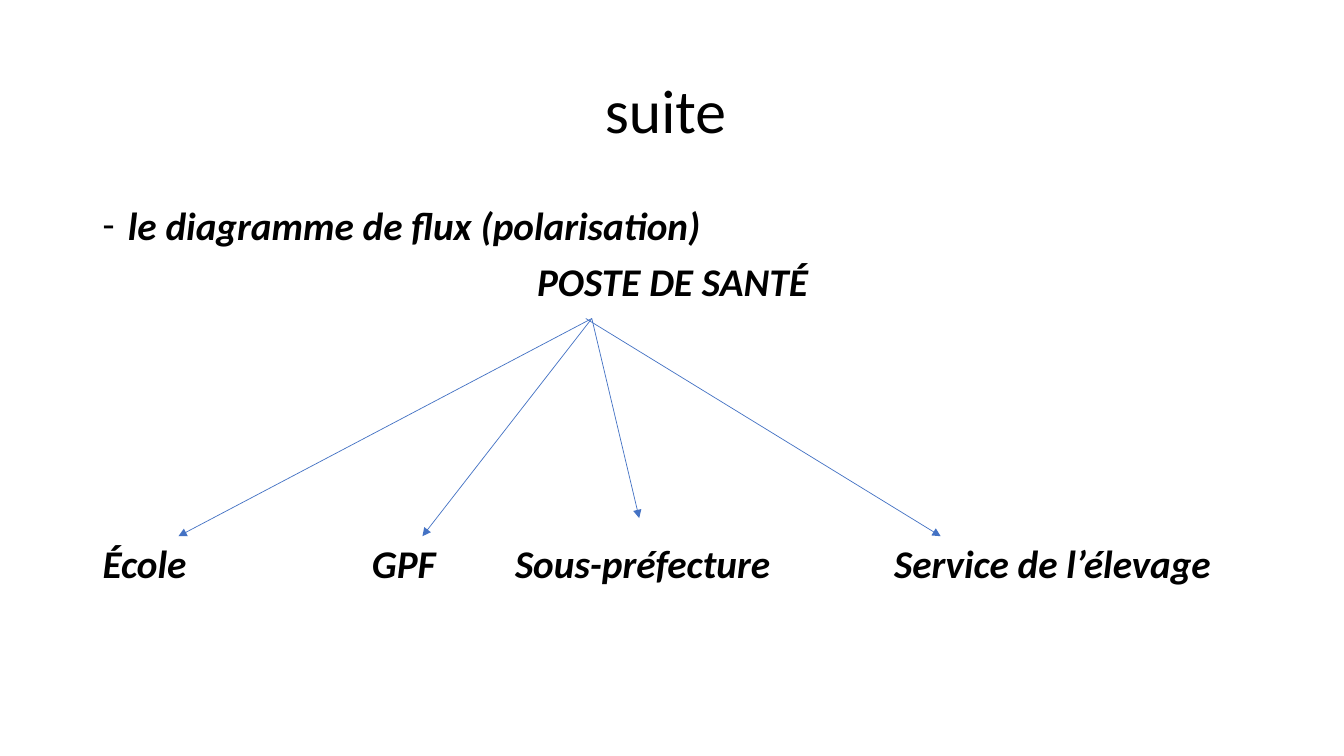
from dataclasses import dataclass

from lxml import etree
from pptx import Presentation
from pptx.dml.color import RGBColor
from pptx.enum import shapes, text
from pptx.oxml import ns
from pptx.util import Inches, Pt

COLOURS = {"text": "000000", "arrow": "4472C4"}
FONT = "Calibri"
ARROW_TOP = 3.16


@dataclass
class Service:
    """A place linked to the health post; lengths are in inches."""
    name: str
    text_left: float
    arrow_end: tuple[float, float]
    arrow_start: float = 5.87


BODY_LEFT = 0.92
TEXT_INSET = 0.1
SERVICES = [
    Service("École", 1.02, (1.77, 5.32)),
    Service("GPF", 3.69, (4.19, 5.32)),
    Service("Sous-préfecture", 5.11, (6.34, 5.14)),
    Service("Service de l’élevage", 8.87, (9.33, 5.32), arrow_start=5.81),
]


def add_element(parent, tag: str, **attributes: str):
    element = etree.SubElement(parent, ns.qn(tag))
    for name, value in attributes.items():
        element.set(name, value)
    return element


def add_text_frame(page, left: float, top: float, width: float, height: float):
    frame = page.shapes.add_textbox(
        Inches(left), Inches(top), Inches(width), Inches(height)).text_frame
    frame.word_wrap = True
    return frame


def style_paragraph(para, size: float, emphasis: bool = False, before: float = 0,
                    align=text.PP_ALIGN.LEFT) -> None:
    para.alignment = align
    para.line_spacing = 0.9
    para.space_before = Pt(before)
    for span in para.runs:
        span.font.name = FONT
        span.font.size = Pt(size)
        span.font.bold = span.font.italic = emphasis
        span.font.color.rgb = RGBColor.from_string(COLOURS["text"])


def add_dash(para) -> None:
    properties = para._p.get_or_add_pPr()
    properties.set("marL", str(Inches(0.25)))
    properties.set("indent", str(-Inches(0.25)))
    add_element(properties, "a:buFont", typeface=FONT)
    add_element(properties, "a:buChar", char="-")


def add_tab_stops(para, positions: list[float]) -> None:
    tabs = add_element(para._p.get_or_add_pPr(), "a:tabLst")
    for position in positions:
        add_element(tabs, "a:tab", pos=str(Inches(position)), algn="l")


def add_title(page) -> None:
    frame = add_text_frame(page, BODY_LEFT, 0.4, 11.5, 1.45)
    frame.vertical_anchor = text.MSO_ANCHOR.MIDDLE
    frame.text = "suite "
    style_paragraph(frame.paragraphs[0], 44, align=text.PP_ALIGN.CENTER)


def add_body(page) -> None:
    frame = add_text_frame(page, BODY_LEFT, 2, 11.5, 4.76)
    services_line = "\t".join(service.name for service in SERVICES)
    frame.text = "\n".join(
        ["le diagramme de flux (polarisation)", "POSTE DE SANTÉ", services_line])
    heading, post, services = frame.paragraphs
    style_paragraph(heading, 28, True, before=10)
    style_paragraph(post, 28, True, before=10, align=text.PP_ALIGN.CENTER)
    style_paragraph(services, 28, True, before=171)
    add_dash(heading)
    add_tab_stops(services, [service.text_left - BODY_LEFT - TEXT_INSET
                             for service in SERVICES[1:]])


def add_arrow(page, service: Service) -> None:
    end_x, end_y = service.arrow_end
    arrow = page.shapes.add_connector(
        shapes.MSO_CONNECTOR.STRAIGHT, Inches(service.arrow_start),
        Inches(ARROW_TOP), Inches(end_x), Inches(end_y))
    arrow.line.color.rgb = RGBColor.from_string(COLOURS["arrow"])
    arrow.line.width = Pt(0.5)
    add_element(arrow.line._get_or_add_ln(), "a:tailEnd", type="triangle")
    add_element(arrow._element.spPr, "a:effectLst")


def main() -> None:
    deck = Presentation()
    deck.slide_width, deck.slide_height = Inches(13.33), Inches(7.5)
    page = deck.slides.add_slide(deck.slide_layouts[6])
    add_title(page)
    add_body(page)
    for service in SERVICES:
        add_arrow(page, service)
    deck.save("out.pptx")


if __name__ == "__main__":
    main()
